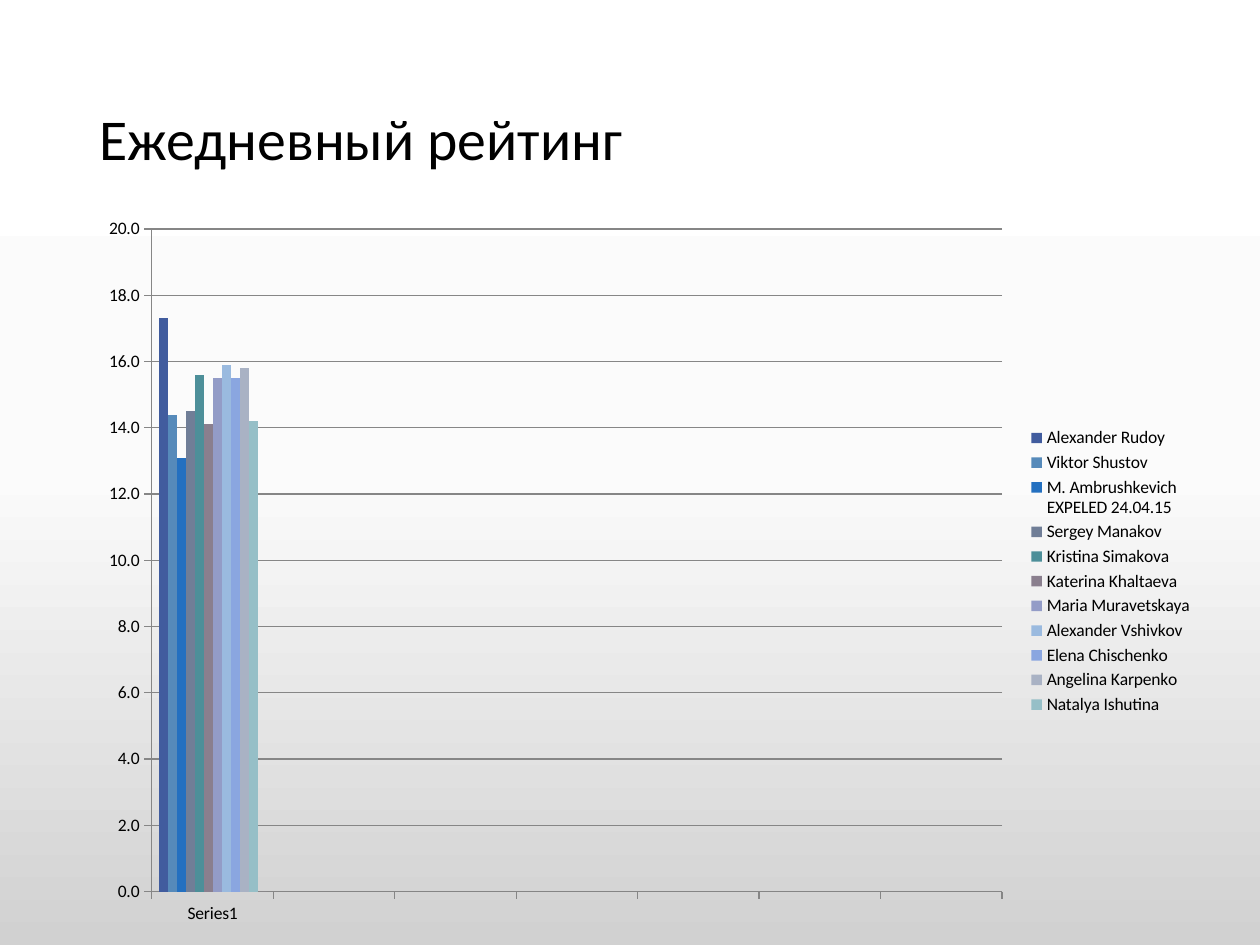
from copy import deepcopy
from dataclasses import dataclass

from lxml.etree import fromstring
from pptx import Presentation
from pptx.chart.data import CategoryChartData
from pptx.dml.color import RGBColor
from pptx.enum.chart import (
    XL_CHART_TYPE as ChartType,
    XL_LEGEND_POSITION as LegendPosition,
    XL_TICK_MARK as TickMark,
)
from pptx.enum.text import MSO_ANCHOR as Anchor, PP_ALIGN as Align
from pptx.util import Inches, Pt

CHART_NAMESPACE = "http://schemas.openxmlformats.org/drawingml/2006/chart"
CATEGORIES = ["Series1"] + [""] * 6
RATINGS = [
    ("Alexander Rudoy", 17.3, "415C9E"),
    ("Viktor Shustov", 14.4, "568ABA"),
    ("M. Ambrushkevich\nEXPELED 24.04.15", 13.1, "2470C0"),
    ("Sergey Manakov", 14.5, "707E97"),
    ("Kristina Simakova", 15.6, "4D8F99"),
    ("Katerina Khaltaeva", 14.1, "8A7F8E"),
    ("Maria Muravetskaya", 15.5, "939CC7"),
    ("Alexander Vshivkov", 15.9, "9ABADF"),
    ("Elena Chischenko", 15.5, "8AA6E0"),
    ("Angelina Karpenko", 15.8, "A9B2C4"),
    ("Natalya Ishutina", 14.2, "96BFC7"),
    ("Series 12", 0, "9D90A0"),
]
HIDDEN_LEGEND_ENTRY = 11


@dataclass(frozen=True)
class Theme:
    font: str = "Calibri"
    title_size: int = 33
    chart_size: int = 10
    text: str = "000000"
    line: str = "868686"
    background: tuple = ((0, "FFFFFF"), (0.5, "FBFBFB"), (1, "D1D1D1"))


def color(value):
    return RGBColor.from_string(value)


def chart_element(xml):
    return fromstring(xml.replace(">", f' xmlns:c="{CHART_NAMESPACE}">', 1))


class SlideBuilder:
    def __init__(self, slide, theme):
        self.slide = slide
        self.theme = theme

    def set_font(self, font, size):
        font.name = self.theme.font
        font.size = Pt(size)
        font.bold = False
        font.color.rgb = color(self.theme.text)

    def set_background(self):
        fill = self.slide.background.fill
        fill.gradient()
        fill.gradient_angle = 270
        first_stop = self.slide.element.xpath(".//p:bg//a:gs")[0]
        first_stop.addnext(deepcopy(first_stop))
        for stop, (position, value) in zip(fill.gradient_stops, self.theme.background):
            stop.position = position
            stop.color.rgb = color(value)

    def set_title(self, text, left, top, width, height):
        title = self.slide.shapes.title
        title.left, title.top, title.width, title.height = map(
            Inches, (left, top, width, height)
        )
        title.text_frame.text = text
        title.text_frame.word_wrap = True
        title.text_frame.vertical_anchor = Anchor.MIDDLE
        paragraph = title.text_frame.paragraphs[0]
        paragraph.alignment = Align.LEFT
        paragraph.line_spacing = 0.9
        self.set_font(paragraph.font, self.theme.title_size)

    def add_rating_chart(self, left, top, width, height):
        data = CategoryChartData(number_format="0.0")
        data.categories = CATEGORIES
        for name, rating, _ in RATINGS:
            data.add_series(name, [rating] + [None] * (len(CATEGORIES) - 1))
        chart = self.slide.shapes.add_chart(
            ChartType.COLUMN_CLUSTERED,
            *map(Inches, (left, top, width, height)),
            data,
        ).chart
        chart.has_title = False
        self.set_font(chart.font, self.theme.chart_size)

        plot = chart.plots[0]
        plot.gap_width = 150
        plot.overlap = 0
        plot.vary_by_categories = False
        for series, (_, _, value) in zip(plot.series, RATINGS):
            series.format.fill.solid()
            series.format.fill.fore_color.rgb = color(value)

        self.style_axes(chart)
        self.style_legend(chart)
        self.place_plot(chart, x=0.058, y=0.034, w=0.76, h=0.902)

    def style_axes(self, chart):
        value_axis = chart.value_axis
        value_axis.minimum_scale = 0
        value_axis.maximum_scale = 20
        value_axis.major_unit = 2
        value_axis.has_major_gridlines = True
        value_axis.tick_labels.number_format = "0.0"
        value_axis.tick_labels.number_format_is_linked = False
        for axis in (chart.category_axis, value_axis):
            axis.major_tick_mark = TickMark.OUTSIDE
            axis.minor_tick_mark = TickMark.NONE
        for element in (chart.category_axis, value_axis, value_axis.major_gridlines):
            element.format.line.color.rgb = color(self.theme.line)
            element.format.line.width = Pt(0.75)

    def style_legend(self, chart):
        chart.has_legend = True
        chart.legend.position = LegendPosition.RIGHT
        chart.legend.include_in_layout = False
        entry = chart_element(
            f'<c:legendEntry><c:idx val="{HIDDEN_LEGEND_ENTRY}"/>'
            '<c:delete val="1"/></c:legendEntry>'
        )
        chart.element.xpath(".//c:legend/c:legendPos")[0].addnext(entry)

    def place_plot(self, chart, **fractions):
        """Fix the inner plot area, in fractions of the chart's size."""
        sizes = "".join(f'<c:{key} val="{value}"/>' for key, value in fractions.items())
        layout = chart_element(
            '<c:layout><c:manualLayout><c:layoutTarget val="inner"/>'
            '<c:xMode val="edge"/><c:yMode val="edge"/>'
            f"{sizes}</c:manualLayout></c:layout>"
        )
        plot_area = chart.element.xpath(".//c:plotArea")[0]
        for old_layout in plot_area.xpath("./c:layout"):
            plot_area.remove(old_layout)
        plot_area.insert(0, layout)


def main():
    presentation = Presentation()
    presentation.slide_width = Inches(10)
    presentation.slide_height = Inches(7.5)
    title_only = presentation.slide_layouts[5]
    builder = SlideBuilder(presentation.slides.add_slide(title_only), Theme())
    builder.set_background()
    builder.set_title("Ежедневный рейтинг", 0.69, 0.4, 8.62, 1.45)
    builder.add_rating_chart(0.69, 1.62, 8.88, 5.83)
    presentation.save("out.pptx")


if __name__ == "__main__":
    main()
